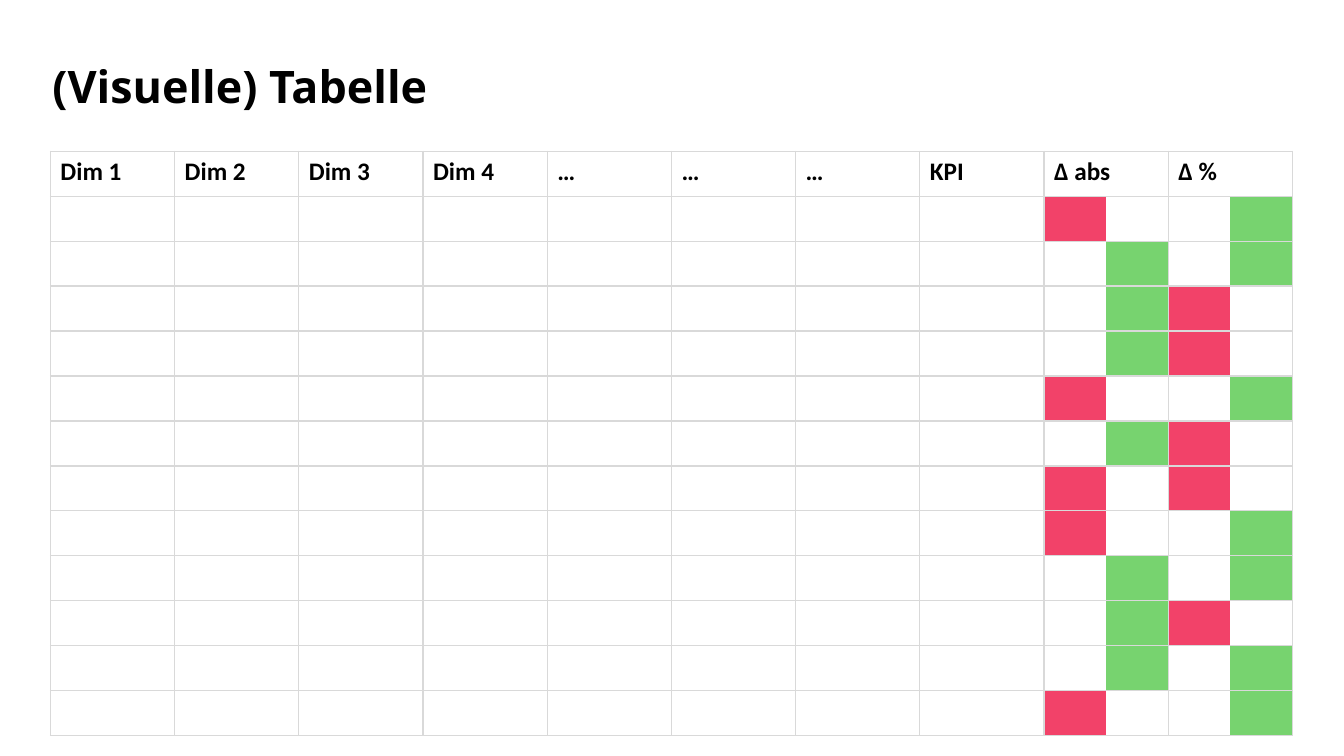
from pptx import Presentation
from pptx.dml.color import RGBColor
from pptx.enum.text import MSO_ANCHOR, MSO_AUTO_SIZE, PP_ALIGN
from pptx.oxml import parse_xml
from pptx.oxml.ns import nsdecls
from pptx.util import Inches, Pt

TITLE = "(Visuelle) Tabelle"
HEADS = ["Dim 1", "Dim 2", "Dim 3", "Dim 4", "…", "…", "…", "KPI", "Δ abs", "Δ %"]
# Sign of the change per row: (absolute, percent)
SIGNS = ["-+", "++", "+-", "+-", "-+", "+-", "--", "-+", "++", "+-", "++", "-+"]

THEME = {
    "title": {"name": "Open Sans", "size": Pt(32), "bold": True},
    "head": {"name": "Calibri", "size": Pt(18), "bold": True},
    "text": "000000",
    "grid": "D9D9D9",
    "bars": {"-": ("F24269", "FFFFFF"), "+": ("FFFFFF", "77D36F")},
}
TITLE_BOX = [Inches(n) for n in (0.42, 0.56, 12.49, 0.64)]
GRID_BOX = [Inches(n) for n in (0.5, 1.5, 12.32, 5.8)]


def style(font, look):
    for key, value in look.items():
        setattr(font, key, value)
    font.color.rgb = RGBColor.from_string(THEME["text"])


def border(cell):
    props = cell._tc.get_or_add_tcPr()
    for side in ("lnL", "lnR", "lnT", "lnB"):
        props.append(parse_xml(
            f'<a:{side} {nsdecls("a")} w="{Pt(1)}"><a:solidFill>'
            f'<a:srgbClr val="{THEME["grid"]}"/></a:solidFill></a:{side}>'))


def split(cell, hues):
    """Fill the cell's two halves with one colour each."""
    cell.fill.gradient()
    cell.fill.gradient_angle = 0
    for stop, hue in zip(cell.fill.gradient_stops, hues):
        stop.position = 0.5
        stop.color.rgb = RGBColor.from_string(hue)


def add_title(slide):
    title = slide.shapes.title
    title.left, title.top, title.width, title.height = TITLE_BOX
    frame = title.text_frame
    frame.text = TITLE
    frame.auto_size = MSO_AUTO_SIZE.NONE
    frame.vertical_anchor = MSO_ANCHOR.MIDDLE
    line = frame.paragraphs[0]
    line.alignment = PP_ALIGN.LEFT
    line.line_spacing = 0.9
    style(line.runs[0].font, THEME["title"])


def add_grid(slide):
    rows, cols = len(SIGNS) + 1, len(HEADS)
    table = slide.shapes.add_table(rows, cols, *GRID_BOX).table
    table.first_row = table.horz_banding = False
    for col in table.columns:
        col.width = GRID_BOX[2] // cols
    for row in table.rows:
        row.height = GRID_BOX[3] // rows
    for cell in table.iter_cells():
        border(cell)
        cell.fill.background()
    for col, head in enumerate(HEADS):
        cell = table.cell(0, col)
        cell.text = head
        style(cell.text_frame.paragraphs[0].runs[0].font, THEME["head"])
    for row, signs in enumerate(SIGNS, 1):
        for col, sign in enumerate(signs, cols - len(signs)):
            split(table.cell(row, col), THEME["bars"][sign])


def main():
    deck = Presentation()
    deck.slide_width, deck.slide_height = Inches(13.33), Inches(7.5)
    slide = deck.slides.add_slide(deck.slide_layouts[5])
    add_title(slide)
    add_grid(slide)
    deck.save("out.pptx")


if __name__ == "__main__":
    main()
